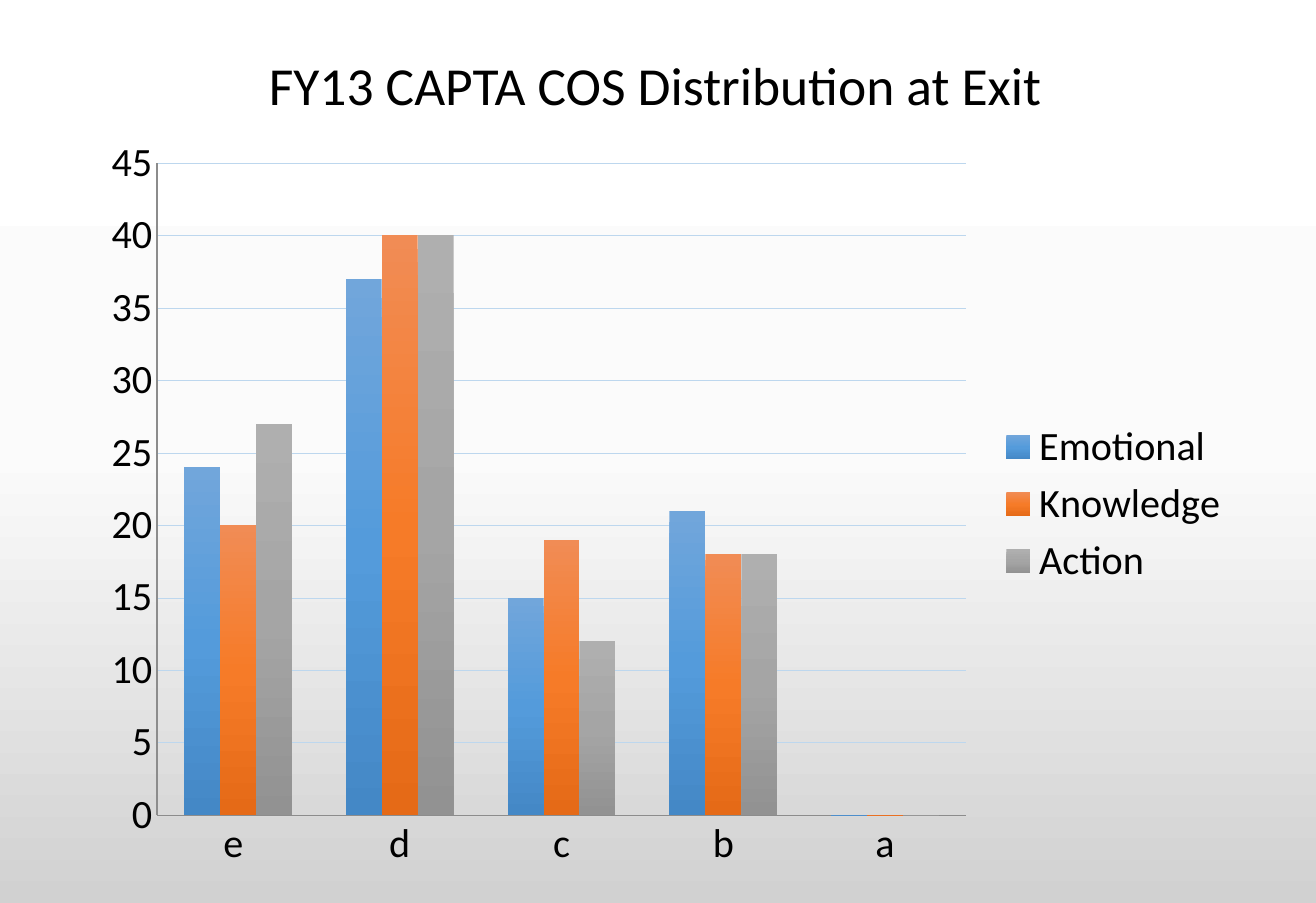
from copy import deepcopy

from lxml.etree import SubElement
from pptx import Presentation
from pptx.chart.data import CategoryChartData
from pptx.dml.color import RGBColor
from pptx.enum.chart import XL_CHART_TYPE as ChartType
from pptx.enum.chart import XL_LEGEND_POSITION as LegendPosition
from pptx.enum.chart import XL_TICK_MARK as TickMark
from pptx.enum.text import MSO_ANCHOR as Anchor
from pptx.enum.text import PP_ALIGN as Align
from pptx.oxml.ns import qn
from pptx.util import Cm, Pt

CATEGORIES = ["e ", "d", "c", "b", "a"]
# name, values, gradient from top to bottom
SERIES = [
    ("Emotional", (24, 37, 15, 21, 0), ("71A6DB", "549BDB", "4488C6")),
    ("Knowledge", (20, 40, 19, 18, 0), ("F18C55", "F67B28", "E56A17")),
    ("Action", (27, 40, 12, 18, 0), ("AFAFAF", "A5A5A5", "929292")),
]
PLOT_AREA = {"x": 0.06, "y": 0.05, "w": 0.7, "h": 0.86}


def color(hex_value):
    return RGBColor.from_string(hex_value)


def set_values(target, values):
    for name, value in values.items():
        setattr(target, name, value)


class SlideBuilder:
    font = "Calibri"
    text_color = "000000"
    axis_color = "8C8C8C"
    grid_color = "BDD7EE"

    def __init__(self, presentation):
        self.slide = presentation.slides.add_slide(presentation.slide_layouts[5])

    def style_font(self, font, size):
        set_values(font, {"name": self.font, "size": Pt(size), "bold": False})
        font.color.rgb = color(self.text_color)

    def gradient(self, fill, owner, colors):
        """Fill downwards with three evenly spaced colours; owner holds the fill's XML."""
        fill.gradient()
        fill.gradient_angle = 270
        stop_list = next(owner.iter(qn("a:gsLst")))
        stop_list.insert(1, deepcopy(stop_list[0]))
        for index, (stop, hex_value) in enumerate(zip(fill.gradient_stops, colors)):
            stop.color.rgb = color(hex_value)
            stop.position = index / 2

    def background(self, colors):
        self.gradient(self.slide.background.fill, self.slide.element, colors)

    def title(self, text, left, top, width, height):
        shape = self.slide.shapes.title
        set_values(shape, {"left": Cm(left), "top": Cm(top),
                           "width": Cm(width), "height": Cm(height)})
        frame = shape.text_frame
        set_values(frame, {"text": text, "word_wrap": True,
                           "vertical_anchor": Anchor.MIDDLE})
        paragraph = frame.paragraphs[0]
        paragraph.alignment = Align.CENTER
        self.style_font(paragraph.runs[0].font, 32)

    def column_chart(self, categories, series_rows, left, top, width, height):
        data = CategoryChartData()
        data.categories = categories
        for name, values, _ in series_rows:
            data.add_series(name, values)
        chart = self.slide.shapes.add_chart(
            ChartType.COLUMN_CLUSTERED, Cm(left), Cm(top), Cm(width), Cm(height), data
        ).chart
        set_values(chart, {"has_title": False, "has_legend": True})
        self.style_font(chart.font, 24)
        set_values(chart.legend, {"position": LegendPosition.RIGHT,
                                  "include_in_layout": False})
        plot = chart.plots[0]
        set_values(plot, {"gap_width": 150, "overlap": 0, "vary_by_categories": False})
        for series, (_, _, colors) in zip(plot.series, series_rows):
            self.gradient(series.format.fill, series._element, colors)
        self.axes(chart)
        self.place_plot(chart)

    def axes(self, chart):
        for axis in (chart.category_axis, chart.value_axis):
            set_values(axis, {"major_tick_mark": TickMark.NONE,
                              "minor_tick_mark": TickMark.NONE})
            self.line(axis.format.line, self.axis_color, 0.75)
        value_axis = chart.value_axis
        set_values(value_axis, {"minimum_scale": 0, "maximum_scale": 45,
                                "major_unit": 5, "has_major_gridlines": True})
        self.line(value_axis.major_gridlines.format.line, self.grid_color, 0.25)

    def line(self, line, hex_value, width):
        line.color.rgb = color(hex_value)
        line.width = Pt(width)

    def place_plot(self, chart):
        """Fix the inner plot area as fractions of the chart."""
        plot_area = next(chart._chartSpace.iter(qn("c:plotArea")))
        layout = plot_area.find(qn("c:layout"))
        if layout is None:
            layout = SubElement(plot_area, qn("c:layout"))
            plot_area.insert(0, layout)
        manual = SubElement(layout, qn("c:manualLayout"))
        settings = {"layoutTarget": "inner", "xMode": "edge", "yMode": "edge", **PLOT_AREA}
        for name, value in settings.items():
            SubElement(manual, qn(f"c:{name}")).set("val", str(value))


def main():
    presentation = Presentation()
    set_values(presentation, {"slide_width": Cm(27.76), "slide_height": Cm(19.05)})
    builder = SlideBuilder(presentation)
    builder.background(("FFFFFF", "FBFBFB", "D1D1D1"))
    builder.column_chart(CATEGORIES, SERIES, 1.85, 2.64, 24.38, 16)
    builder.title("FY13 CAPTA COS Distribution at Exit", 4.85, 0.97, 17.96, 1.63)
    presentation.save("out.pptx")


if __name__ == "__main__":
    main()
